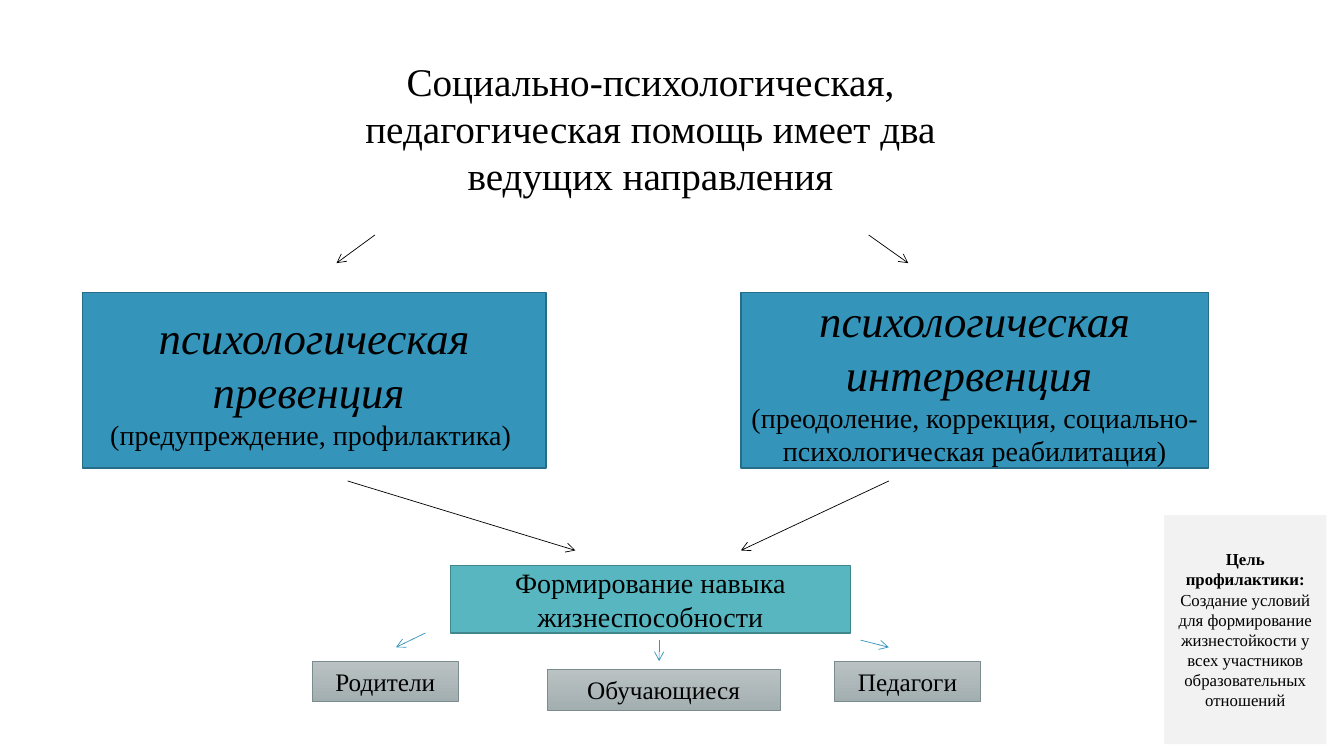
from dataclasses import dataclass
from lxml.etree import SubElement
from pptx import Presentation
from pptx.dml.color import RGBColor as Rgb
from pptx.enum.shapes import MSO_CONNECTOR as Link, MSO_SHAPE as Shape
from pptx.enum.text import MSO_ANCHOR as Anchor, MSO_AUTO_SIZE as Fit, PP_ALIGN as Align
from pptx.oxml.ns import qn
from pptx.util import Cm, Pt


@dataclass(frozen=True)
class Theme:
    font: str = "Times New Roman"
    ink: str = "000000"
    blue: str = "3494BA"
    navy: str = "266D8A"
    teal: str = "58B6C0"
    pine: str = "41878E"
    light: str = "BBC2C3"
    dark: str = "A3AEB0"
    edge: str = "7A8C8E"
    pale: str = "F2F2F2"
    title: int = 28
    term: int = 32
    body: int = 20
    role: int = 18
    note: int = 12
    thick: float = 1
    thin: float = 0.5


T = Theme()

# Lengths in centimetres
TITLE = "Социально-психологическая, педагогическая помощь имеет два ведущих направления"
TITLE_AT = (7.92, 1.32, 16.94, 3.84)

WAY_TOP, WAY_H = 7.37, 4.42
WAYS = [
    (2.08, 11.68, "психологическая превенция ", "(предупреждение, профилактика) "),
    (18.67, 11.79, "психологическая интервенция ",
     "(преодоление, коррекция, социально-психологическая реабилитация)"),
]

SKILL = "Формирование навыка жизнеспособности"
SKILL_AT = (11.35, 14.25, 10.08, 1.7)

ROLE_H = 1.02
ROLES = [
    (7.87, 16.66, 3.68, "Родители"),
    (13.79, 16.87, 5.87, "Обучающиеся"),
    (21.03, 16.66, 3.68, "Педагоги"),
]

GOAL = "Цель профилактики:"
GOAL_TEXT = ("Создание условий для формирование жизнестойкости "
             "у всех участников образовательных отношений")
GOAL_AT = (29.34, 12.98, 4.09, 5.77)

ARROWS = {
    T.ink: [
        (9.45, 5.92, 8.48, 6.63),
        (21.89, 5.92, 22.89, 6.63),
        (8.76, 12.12, 14.5, 13.87),
        (22.4, 12.12, 18.67, 13.87),
    ],
    T.blue: [
        (10.72, 15.95, 9.98, 16.31),
        (16.61, 16.13, 16.61, 16.66),
        (21.69, 16.13, 22.4, 16.31),
    ],
}


def color(code):
    return Rgb.from_string(code)


def write(frame, lines):
    """Fill a frame with centred lines of (text, size, bold, italic)."""
    frame.word_wrap = True
    for i, (text, size, bold, slant) in enumerate(lines):
        para = frame.add_paragraph() if i else frame.paragraphs[0]
        para.text = text
        para.alignment = Align.CENTER
        font = para.font
        font.name, font.size = T.font, Pt(size)
        font.bold, font.italic = bold, slant
        font.color.rgb = color(T.ink)


def add_box(slide, at, lines, fill, edge=None, width=T.thick):
    """Add a text rectangle; a pair of fill colours makes a vertical gradient."""
    box = slide.shapes.add_shape(Shape.RECTANGLE, *map(Cm, at))
    box.shadow.inherit = False
    if isinstance(fill, tuple):
        box.fill.gradient()
        box.fill.gradient_angle = 270
        for stop, code in zip(box.fill.gradient_stops, fill):
            stop.color.rgb = color(code)
    else:
        box.fill.solid()
        box.fill.fore_color.rgb = color(fill)
    if edge:
        box.line.color.rgb = color(edge)
        box.line.width = Pt(width)
    else:
        box.line.fill.background()
    box.text_frame.vertical_anchor = Anchor.MIDDLE
    write(box.text_frame, lines)


def add_arrow(slide, ends, code):
    arrow = slide.shapes.add_connector(Link.STRAIGHT, *map(Cm, ends))
    arrow.line.color.rgb = color(code)
    arrow.line.width = Pt(T.thin)
    SubElement(arrow.line._get_or_add_ln(), qn("a:tailEnd"), type="arrow")
    SubElement(arrow._element.spPr, qn("a:effectLst"))


def add_title(slide):
    title = slide.shapes.title
    title.left, title.top, title.width, title.height = map(Cm, TITLE_AT)
    title.text_frame.auto_size = Fit.NONE
    title.text_frame.vertical_anchor = Anchor.TOP
    write(title.text_frame, [(TITLE, T.title, False, False)])


def main():
    deck = Presentation()
    deck.slide_width, deck.slide_height = Cm(33.87), Cm(19.05)
    slide = deck.slides.add_slide(deck.slide_layouts[5])

    add_title(slide)
    for left, width, term, gloss in WAYS:
        lines = [(term, T.term, False, True), (gloss, T.body, False, False)]
        add_box(slide, (left, WAY_TOP, width, WAY_H), lines, T.blue, T.navy)
    add_box(slide, SKILL_AT, [(SKILL, T.body, False, False)], T.teal, T.pine)
    for left, top, width, name in ROLES:
        add_box(slide, (left, top, width, ROLE_H), [(name, T.role, False, False)],
                (T.light, T.dark), T.edge, T.thin)
    for code, group in ARROWS.items():
        for ends in group:
            add_arrow(slide, ends, code)
    add_box(slide, GOAL_AT, [(GOAL, T.note, True, False),
                             (GOAL_TEXT, T.note, False, False)], T.pale)

    deck.save("out.pptx")


if __name__ == "__main__":
    main()
